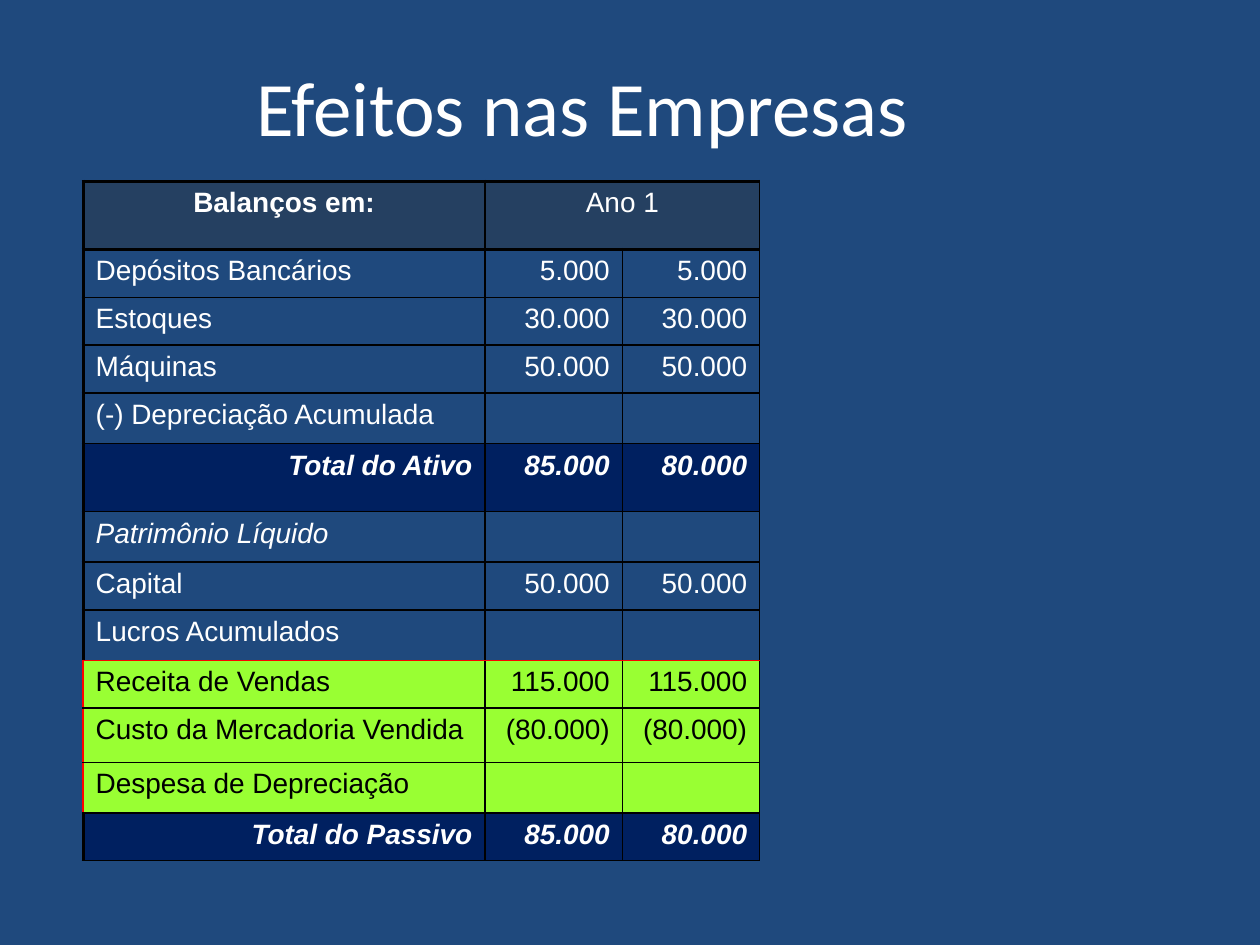
from dataclasses import dataclass

from lxml.etree import fromstring
from pptx import Presentation
from pptx.dml.color import RGBColor
from pptx.enum.text import MSO_ANCHOR as Anchor, PP_ALIGN as Align
from pptx.oxml.ns import nsdecls
from pptx.util import Inches, Pt

NAVY, SLATE, LIME = "002060", "254061", "99FF33"
BLACK, WHITE, RED = "000000", "FFFFFF", "FF0000"


def color(value):
    return RGBColor.from_string(value)


def write(frame, text, font="Arial", size=16, ink=WHITE, bold=False,
          italic=False, align=Align.LEFT):
    paragraph = frame.paragraphs[0]
    paragraph.alignment = align
    run = paragraph.add_run()
    run.text = text
    run.font.name, run.font.size = font, Pt(size)
    run.font.bold, run.font.italic = bold, italic
    run.font.color.rgb = color(ink)


def set_borders(cell, **sides):
    properties = cell._tc.get_or_add_tcPr()
    for position, side in enumerate("LRTB"):
        ink, width = sides.get(side, (BLACK, 1))
        line = fromstring(
            f'<a:ln{side} {nsdecls("a")} w="{Pt(width)}"><a:solidFill>'
            f'<a:srgbClr val="{ink}"/></a:solidFill></a:ln{side}>')
        properties.insert(position, line)


@dataclass
class RowStyle:
    fill: str = ""
    ink: str = WHITE
    label_bold: bool = False
    bold: bool = False
    italic: bool = False
    label_italic: bool = False
    label_align: Align = Align.JUSTIFY
    value_align: Align = Align.RIGHT


HEADER = RowStyle(SLATE, label_bold=True, label_align=Align.CENTER,
                  value_align=Align.CENTER)
ACCOUNT = RowStyle()
SECTION = RowStyle(label_italic=True, label_align=Align.LEFT)
RESULT = RowStyle(LIME, BLACK)
TOTAL = RowStyle(NAVY, label_bold=True, bold=True, italic=True,
                 label_italic=True, label_align=Align.RIGHT)

BALANCE = [
    (HEADER, 0.54, "Balanços em:", "Ano 1", ""),
    (ACCOUNT, 0.38, "Depósitos Bancários", "5.000", "5.000"),
    (ACCOUNT, 0.38, "Estoques", "30.000", "30.000"),
    (ACCOUNT, 0.38, "Máquinas", "50.000", "50.000"),
    (ACCOUNT, 0.38, "(-) Depreciação Acumulada", "", ""),
    (TOTAL, 0.54, "Total do Ativo", "85.000", "80.000"),
    (SECTION, 0.38, "Patrimônio Líquido", "", ""),
    (ACCOUNT, 0.38, "Capital", "50.000", "50.000"),
    (ACCOUNT, 0.38, "Lucros Acumulados", "", ""),
    (RESULT, 0.38, "Receita de Vendas", "115.000", "115.000"),
    (RESULT, 0.43, "Custo da Mercadoria Vendida", "(80.000)", "(80.000)"),
    (RESULT, 0.38, "Despesa de Depreciação", "", ""),
    (TOTAL, 0.38, "Total do Passivo", "85.000", "80.000"),
]


class SlideBuilder:
    def __init__(self, slide, background):
        self.slide = slide
        slide.background.fill.solid()
        slide.background.fill.fore_color.rgb = color(background)

    def title(self, text, left, top, width, height):
        heading = self.slide.shapes.add_textbox(
            Inches(left), Inches(top), Inches(width), Inches(height))
        frame = heading.text_frame
        frame.word_wrap = True
        frame.vertical_anchor = Anchor.MIDDLE
        write(frame, text, font="Calibri", size=44, align=Align.CENTER)

    def balance_table(self, rows, left, top, widths):
        height = sum(row[1] for row in rows)
        balance = self.slide.shapes.add_table(
            len(rows), len(widths), Inches(left), Inches(top),
            Inches(sum(widths)), Inches(height)).table
        balance.first_row = balance.horz_banding = False
        for column, width in zip(balance.columns, widths):
            column.width = Inches(width)
        first_result = next(i for i, row in enumerate(rows) if row[0] is RESULT)
        for r, (style, row_height, *texts) in enumerate(rows):
            balance.rows[r].height = Inches(row_height)
            for c, text in enumerate(texts):
                cell = balance.cell(r, c)
                self.balance_cell(cell, text, style, is_label=c == 0)
                borders = {}
                if c == 0:
                    borders["L"] = (RED, 1) if style is RESULT else (BLACK, 2)
                if r <= 1:
                    borders["T"] = (BLACK, 2)
                if r == 0:
                    borders["B"] = (BLACK, 2)
                if r == first_result:
                    borders["T"] = (RED, 1)
                if r == first_result - 1:
                    borders["B"] = (RED, 1)
                set_borders(cell, **borders)
        balance.cell(0, 1).merge(balance.cell(0, 2))

    def balance_cell(self, cell, text, style, is_label):
        if style.fill:
            cell.fill.solid()
            cell.fill.fore_color.rgb = color(style.fill)
        else:
            cell.fill.background()
        write(cell.text_frame, text, ink=style.ink,
              bold=style.label_bold if is_label else style.bold,
              italic=style.label_italic if is_label else style.italic,
              align=style.label_align if is_label else style.value_align)


def main():
    deck = Presentation()
    deck.slide_width, deck.slide_height = Inches(10), Inches(7.5)
    builder = SlideBuilder(deck.slides.add_slide(deck.slide_layouts[6]), "1F497D")
    builder.title("Efeitos nas Empresas", 0.5, 0.13, 8.25, 1.42)
    builder.balance_table(BALANCE, 0.66, 1.44, [3.19, 1.09, 1.09])
    deck.save("out.pptx")


if __name__ == "__main__":
    main()
